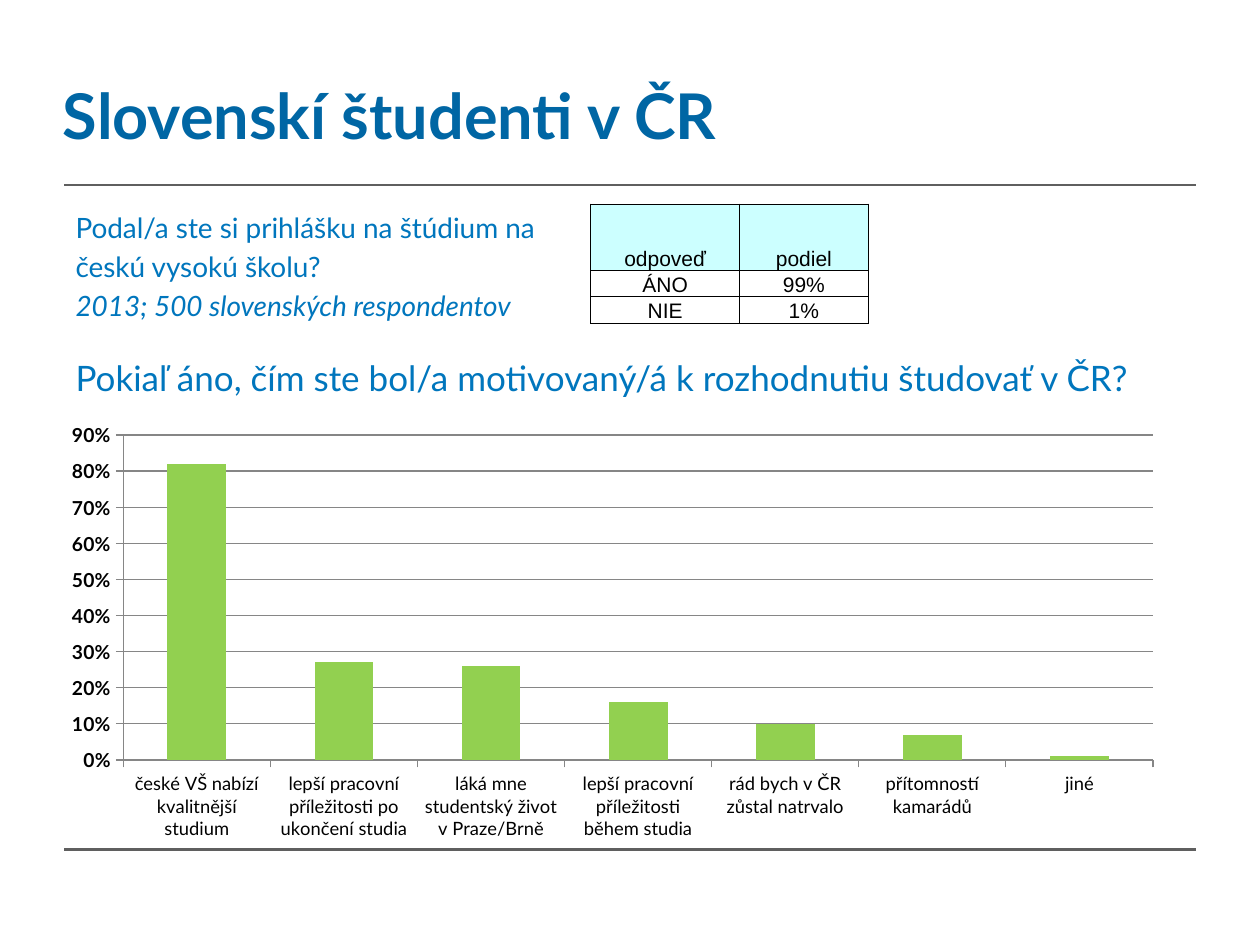
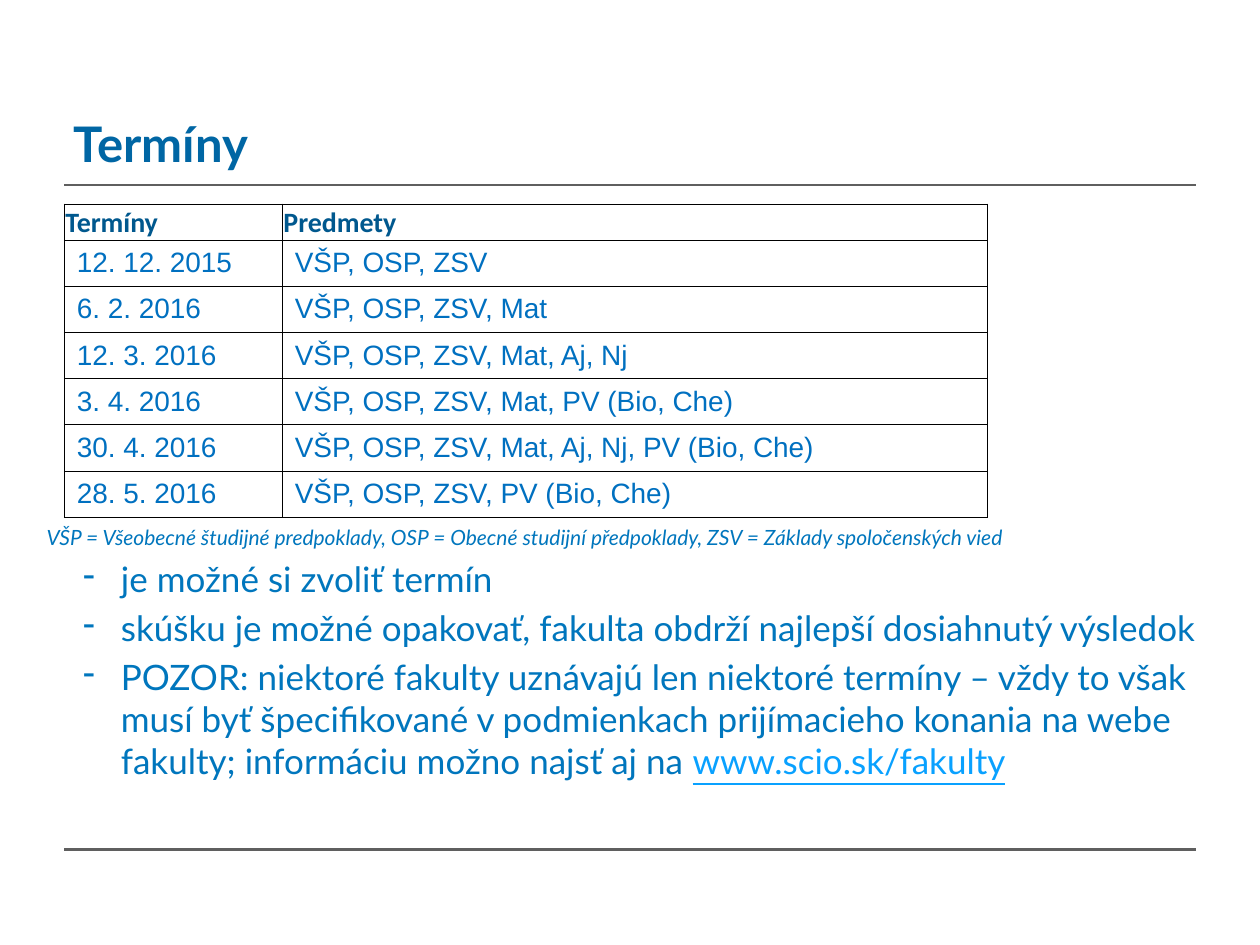
from lxml import etree
from pptx import Presentation
from pptx.chart.data import CategoryChartData
from pptx.dml.color import RGBColor
from pptx.enum.chart import XL_CHART_TYPE, XL_TICK_MARK
from pptx.enum.shapes import MSO_CONNECTOR
from pptx.enum.text import MSO_ANCHOR, PP_ALIGN
from pptx.oxml import parse_xml
from pptx.oxml.ns import nsdecls, qn
from pptx.util import Pt

# Content: paragraphs are (runs, format), runs are (text, font values)
STUDENTS_TITLE = "Slovenskí študenti v ČR"
QUESTIONS = [
    ([("Podal/a ste si prihlášku na štúdium na", {})], {}),
    ([("českú vysokú školu?", {})], {"space_before": Pt(3.2)}),
    ([("2013; 500 slovenských respondentov", {"italic": True})],
     {"space_before": Pt(3.2)}),
    ([("Pokiaľ áno, čím ste bol/a motivovaný/á k rozhodnutiu študovať v ČR?",
       {"size": Pt(20)})], {"space_before": Pt(19.6)}),
]
ANSWERS = [("odpoveď", "podiel"), ("ÁNO", "99%"), ("NIE", "1%")]
MOTIVES = [
    ("české VŠ nabízí kvalitnější studium", 0.82),
    ("lepší pracovní příležitosti po ukončení studia", 0.27),
    ("láká mne studentský život v Praze/Brně", 0.26),
    ("lepší pracovní příležitosti během studia", 0.16),
    ("rád bych v ČR zůstal natrvalo", 0.10),
    ("přítomností kamarádů", 0.07),
    ("jiné", 0.01),
]

DATES_TITLE = "Termíny"
DATES = [
    ("Termíny", "Predmety"),
    ("12. 12. 2015", "VŠP, OSP, ZSV"),
    ("6. 2. 2016", "VŠP, OSP, ZSV, Mat"),
    ("12. 3. 2016", "VŠP, OSP, ZSV, Mat, Aj, Nj"),
    ("3. 4. 2016", "VŠP, OSP, ZSV, Mat, PV (Bio, Che)"),
    ("30. 4. 2016", "VŠP, OSP, ZSV, Mat, Aj, Nj, PV (Bio, Che)"),
    ("28. 5. 2016", "VŠP, OSP, ZSV, PV (Bio, Che)"),
]
ABBREVIATIONS = ("VŠP = Všeobecné študijné predpoklady, OSP = Obecné studijní "
                 "předpoklady, ZSV = Základy spoločenských vied")
BULLET_GAP = {"space_before": Pt(4)}
NOTES = [
    ([("je možné si zvoliť termín", {})], {}),
    ([("skúšku je možné opakovať, fakulta obdrží najlepší dosiahnutý výsledok",
       {})], BULLET_GAP),
    ([("POZOR: niektoré fakulty uznávajú len niektoré termíny – vždy to však "
       "musí byť špecifikované v podmienkach prijímacieho konania na webe "
       "fakulty; informáciu možno najsť aj na ", {}),
      ("www.scio.sk/fakulty", {"color": "09A1FF", "underline": True})],
     BULLET_GAP),
]

# Shared look
FONT = "Lato"
TITLE_BLUE, TEXT_BLUE, TABLE_BLUE = "0066A4", "0076BD", "0070C0"
RULE_GRAY, GRID_GRAY, BLACK = "5F5F5F", "868686", "000000"
RULE_LEFT, RULE_RIGHT, RULE_TOPS = 36.7, 683.3, (105.8, 485.3)
TABLE_TOP = 116.6
NO_MARGINS = (0, 0, 0, 0)


def rgb(value):
    return RGBColor.from_string(value)


def set_values(target, values):
    for name, value in values.items():
        if name == "color":
            target.color.rgb = rgb(value)
        else:
            setattr(target, name, value)


def set_margins(target, margins):
    for side, margin in zip(("left", "top", "right", "bottom"), margins):
        setattr(target, f"margin_{side}", Pt(margin))


def add_bullet(paragraph, indent, hanging):
    properties = paragraph._p.get_or_add_pPr()
    properties.set("marL", str(Pt(indent)))
    properties.set("indent", str(-Pt(hanging)))
    etree.SubElement(properties, qn("a:buChar")).set("char", "-")


def add_text(slide, box, paragraphs, font, bullets=False):
    shape = slide.shapes.add_textbox(*map(Pt, box))
    frame = shape.text_frame
    frame.word_wrap = True
    set_margins(frame, NO_MARGINS)
    for number, (runs, layout) in enumerate(paragraphs):
        paragraph = frame.add_paragraph() if number else frame.paragraphs[0]
        if bullets:
            add_bullet(paragraph, 42.5, 21.6)
        set_values(paragraph, layout)
        for text, changes in runs:
            run = paragraph.add_run()
            run.text = text
            set_values(run.font, {"name": FONT, "color": TEXT_BLUE, **font, **changes})


def add_slide(presentation, title, left, top, size):
    slide = presentation.slides.add_slide(presentation.slide_layouts[6])
    for rule_top in RULE_TOPS:
        rule = slide.shapes.add_connector(
            MSO_CONNECTOR.STRAIGHT, Pt(RULE_LEFT), Pt(rule_top),
            Pt(RULE_RIGHT), Pt(rule_top))
        set_values(rule.line, {"color": RULE_GRAY, "width": Pt(1.5)})
        etree.SubElement(rule._element.spPr, qn("a:effectLst"))
    add_text(slide, (left, top, 640, size * 1.22), [([(title, {})], {})],
             {"size": Pt(size), "bold": True, "color": TITLE_BLUE})
    return slide


def set_borders(cell):
    properties = cell._tc.get_or_add_tcPr()
    for position, side in enumerate(("lnL", "lnR", "lnT", "lnB")):
        properties.insert(position, parse_xml(
            f'<a:{side} {nsdecls("a")} w="{Pt(0.5)}"><a:solidFill>'
            f'<a:srgbClr val="{BLACK}"/></a:solidFill></a:{side}>'))


def add_table(slide, left, widths, heights, rows, header, body):
    """Header and body are dicts with font, margins, align, anchor and fill."""
    frame = slide.shapes.add_table(
        len(rows), len(widths), Pt(left), Pt(TABLE_TOP),
        Pt(sum(widths)), Pt(sum(heights)))
    table = frame.table
    table.first_row = table.horz_banding = False
    for column, width in zip(table.columns, widths):
        column.width = Pt(width)
    for row, height, texts in zip(table.rows, heights, rows):
        row.height = Pt(height)
        style = header if texts is rows[0] else body
        for cell, text in zip(row.cells, texts):
            cell.text = text
            cell.vertical_anchor = style["anchor"]
            set_margins(cell, style["margins"])
            if style["fill"]:
                cell.fill.solid()
                cell.fill.fore_color.rgb = rgb(style["fill"])
            else:
                cell.fill.background()
            paragraph = cell.text_frame.paragraphs[0]
            paragraph.alignment = style["align"]
            set_values(paragraph.runs[0].font, style["font"])
            set_borders(cell)


def set_plot_area(chart, **fractions):
    plot_area = chart._chartSpace.chart.plotArea
    for old in plot_area.findall(qn("c:layout")):
        plot_area.remove(old)
    values = "".join(f'<c:{key} val="{value}"/>' for key, value in fractions.items())
    plot_area.insert(0, parse_xml(
        f'<c:layout {nsdecls("c")}><c:manualLayout><c:layoutTarget val="inner"/>'
        f'<c:xMode val="edge"/><c:yMode val="edge"/>{values}'
        f'</c:manualLayout></c:layout>'))


def add_motive_chart(slide):
    names, shares = zip(*MOTIVES)
    data = CategoryChartData(number_format="0%")
    data.categories = names
    data.add_series("Series 1", shares)
    chart = slide.shapes.add_chart(
        XL_CHART_TYPE.COLUMN_CLUSTERED, Pt(25.2), Pt(236.2), Pt(646.6),
        Pt(247.7), data).chart
    set_values(chart, {"has_legend": False, "has_title": False})
    text = {"name": FONT, "color": BLACK}
    set_values(chart.font, {**text, "size": Pt(10)})

    plot = chart.plots[0]
    set_values(plot, {"gap_width": 150, "vary_by_categories": False})
    fill = plot.series[0].format.fill
    fill.solid()
    fill.fore_color.rgb = rgb("92D050")

    line = {"color": GRID_GRAY, "width": Pt(0.75)}
    category_axis, value_axis = chart.category_axis, chart.value_axis
    for axis, size, bold in ((category_axis, 10.5, False), (value_axis, 11, True)):
        axis.major_tick_mark = XL_TICK_MARK.OUTSIDE
        set_values(axis.tick_labels.font, {**text, "size": Pt(size), "bold": bold})
        set_values(axis.format.line, line)
    set_values(value_axis, {"minimum_scale": 0, "maximum_scale": 0.9,
                            "major_unit": 0.1, "has_major_gridlines": True})
    set_values(value_axis.tick_labels,
               {"number_format": "0%", "number_format_is_linked": False})
    set_values(value_axis.major_gridlines.format.line, line)
    set_plot_area(chart, x=0.07, y=0.05, w=0.91, h=0.75)


def build_students(presentation):
    slide = add_slide(presentation, STUDENTS_TITLE, 36, 43.5, 36)
    add_text(slide, (43.2, 120.2, 633.6, 110), QUESTIONS, {"size": Pt(16)})
    body = {"font": {"name": "Arial", "size": Pt(12), "color": BLACK},
            "margins": NO_MARGINS, "align": PP_ALIGN.CENTER,
            "anchor": MSO_ANCHOR.BOTTOM, "fill": None}
    add_table(slide, 337.6, (85, 73.6), (38, 15, 15), ANSWERS,
              {**body, "fill": "CCFFFF"}, body)
    add_motive_chart(slide)


def build_dates(presentation):
    slide = add_slide(presentation, DATES_TITLE, 42.3, 65, 28)
    body = {"font": {"name": "Arial", "size": Pt(16), "color": TABLE_BLUE},
            "margins": (7.2, 3.6, 7.2, 3.6), "align": PP_ALIGN.LEFT,
            "anchor": MSO_ANCHOR.MIDDLE, "fill": None}
    header = {**body, "margins": (0.7, 0.7, 0.7, 0),
              "font": {"name": "Calibri", "size": Pt(16), "color": "00588E",
                       "bold": True}}
    add_table(slide, RULE_LEFT, (124.6, 402.7), [20.5] + [24.95] * 6,
              DATES, header, body)
    add_text(slide, (26.6, 300, 660, 15), [([(ABBREVIATIONS, {})], {})],
             {"size": Pt(12), "italic": True})
    add_text(slide, (26.6, 318.8, 661, 130), NOTES, {"size": Pt(20)}, bullets=True)


def main():
    presentation = Presentation()
    presentation.slide_width, presentation.slide_height = Pt(720), Pt(540)
    build_students(presentation)
    build_dates(presentation)
    presentation.save("out.pptx")


if __name__ == "__main__":
    main()
